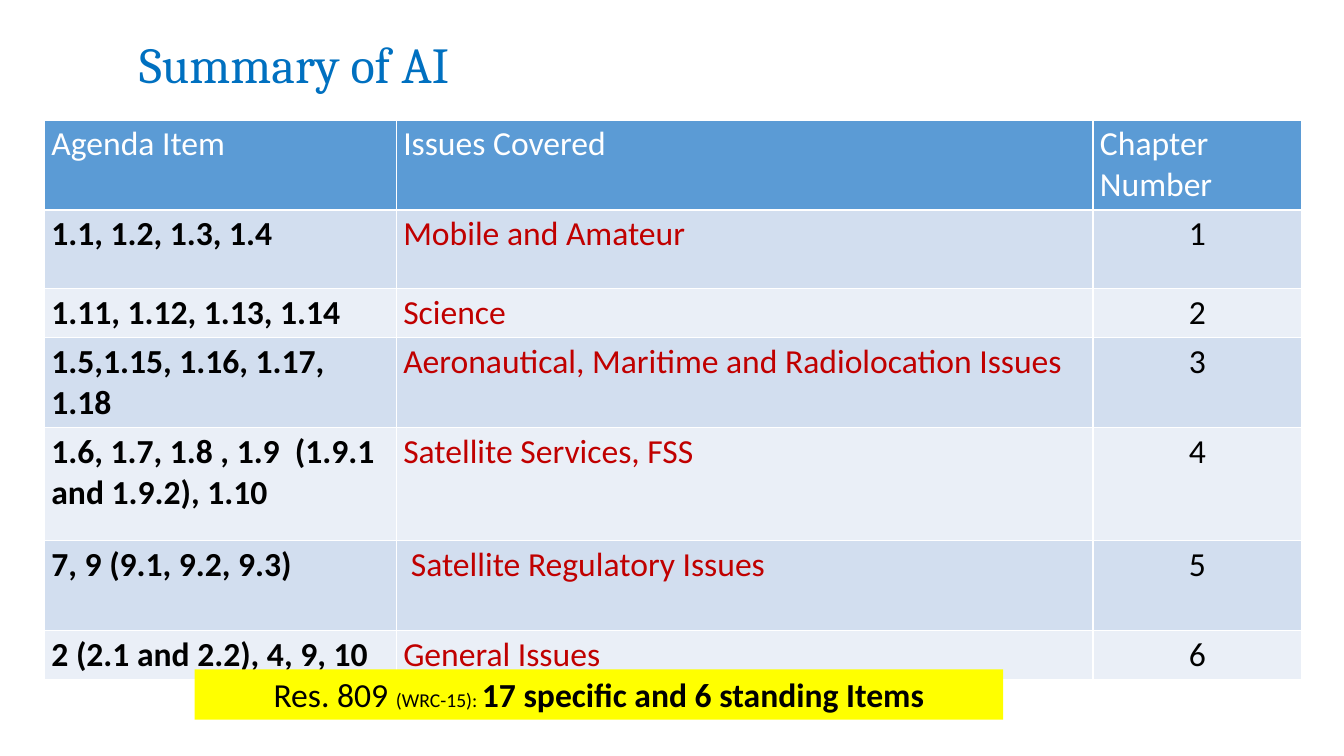
from pptx import Presentation
from pptx import util as u
from pptx.dml.color import RGBColor
from pptx.enum import shapes, text

COLORS = {
    "title": "0070C0", "header": "5B9BD5", "band": "D2DEEF", "light": "EAEFF7",
    "issue": "C00000", "note": "FFFF00", "black": "000000", "white": "FFFFFF",
}
LEFT, CENTER = text.PP_ALIGN.LEFT, text.PP_ALIGN.CENTER

HEADERS = ["Agenda Item", "Issues Covered", "Chapter Number"]
CHAPTERS = [
    ("1.1, 1.2, 1.3, 1.4", "Mobile and Amateur"),
    ("1.11, 1.12, 1.13, 1.14", "Science"),
    ("1.5,1.15, 1.16, 1.17, 1.18", "Aeronautical, Maritime and Radiolocation Issues"),
    ("1.6, 1.7, 1.8 , 1.9  (1.9.1 and 1.9.2), 1.10", "Satellite Services, FSS"),
    ("7, 9 (9.1, 9.2, 9.3)", " Satellite Regulatory Issues"),
    ("2 (2.1 and 2.2), 4, 9, 10", "General Issues"),
]
COL_WIDTHS = [3.49, 6.91, 2.07]
ROW_HEIGHTS = [0.89, 0.78, 0.48, 0.89, 1.12, 0.89, 0.48]


def rgb(name):
    return RGBColor.from_string(COLORS[name])


def set_values(obj, values):
    for name, value in values.items():
        setattr(obj, name, value)


def box(left, top, width, height):
    names = ("left", "top", "width", "height")
    return dict(zip(names, map(u.Inches, (left, top, width, height))))


class Deck:
    font = "Calibri"
    size = 24

    def __init__(self):
        self.prs = Presentation()
        set_values(self.prs, {"slide_width": u.Inches(13.33), "slide_height": u.Inches(7.5)})
        self.s = self.prs.slides.add_slide(self.prs.slide_layouts[5])

    def add_runs(self, tf, runs, align=LEFT):
        """Fill the first paragraph with (text, colour, font values) runs."""
        p = tf.paragraphs[0]
        p.alignment = align
        for content, color, values in runs:
            r = p.add_run()
            r.text = content
            base = {"name": self.font, "size": u.Pt(self.size), "bold": False}
            set_values(r.font, {**base, **values})
            r.font.color.rgb = rgb(color)
        return p

    def title(self, content, place):
        sp = self.s.shapes.title
        set_values(sp, place)
        tf = sp.text_frame
        set_values(tf, {"word_wrap": True, "auto_size": text.MSO_AUTO_SIZE.NONE,
                        "vertical_anchor": text.MSO_ANCHOR.MIDDLE})
        p = self.add_runs(tf, [(content, "title", {"name": "Cambria", "size": u.Pt(36)})])
        p.line_spacing = 0.9

    def table(self, left, top, widths, heights, rows):
        place = box(left, top, sum(widths), sum(heights))
        tbl = self.s.shapes.add_table(len(heights), len(widths), **place).table
        for col, width in zip(tbl.columns, widths):
            col.width = u.Inches(width)
        for row, height, (fill, cells) in zip(tbl.rows, heights, rows):
            row.height = u.Inches(height)
            for cell, (content, color, bold, align) in zip(row.cells, cells):
                cell.fill.solid()
                cell.fill.fore_color.rgb = rgb(fill)
                set_values(cell, {"margin_left": u.Inches(0.07), "margin_right": u.Inches(0.07),
                                  "margin_top": u.Inches(0.04), "margin_bottom": u.Inches(0.04)})
                self.add_runs(cell.text_frame, [(content, color, {"bold": bold})], align)

    def note(self, place, runs):
        sp = self.s.shapes.add_shape(shapes.MSO_SHAPE.RECTANGLE, **place)
        sp.shadow.inherit = False
        sp.fill.solid()
        sp.fill.fore_color.rgb = rgb("note")
        sp.line.fill.background()
        set_values(sp.text_frame, {"word_wrap": True, "vertical_anchor": text.MSO_ANCHOR.TOP,
                                   "auto_size": text.MSO_AUTO_SIZE.SHAPE_TO_FIT_TEXT})
        self.add_runs(sp.text_frame, runs, CENTER)


def main():
    deck = Deck()

    # Title
    deck.title("Summary of AI", box(1.28, 0.43, 8.33, 0.48))

    # Agenda table: header, then banded chapter rows
    rows = [("header", [(h, "white", False, LEFT) for h in HEADERS])]
    for number, (items, issue) in enumerate(CHAPTERS, 1):
        rows.append(("band" if number % 2 else "light", [
            (items, "black", True, LEFT),
            (issue, "issue", False, LEFT),
            (str(number), "black", False, CENTER),
        ]))
    deck.table(0.44, 1.19, COL_WIDTHS, ROW_HEIGHTS, rows)

    # Highlighted total
    deck.note(box(1.93, 6.64, 8.02, 0.5), [
        ("Res. 809 ", "black", {}),
        ("(WRC-15): ", "black", {"size": u.Pt(14)}),
        ("17 specific and 6 standing Items", "black", {"bold": True}),
    ])

    deck.prs.save("out.pptx")


if __name__ == "__main__":
    main()
